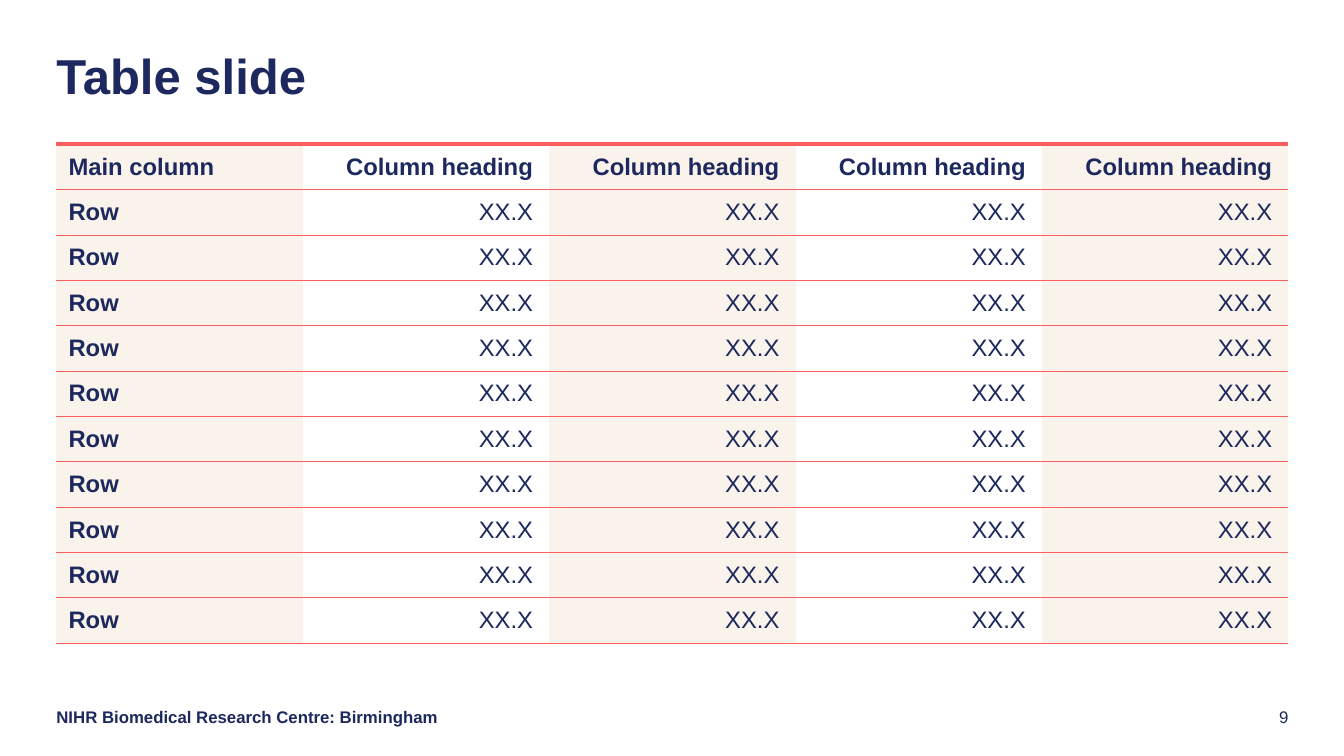
from lxml import etree
from pptx import Presentation
from pptx import util as u
from pptx.dml.color import RGBColor
from pptx.enum import text
from pptx.oxml.ns import qn

COLOURS = {"navy": "1C285E", "coral": "FC5D5D", "cream": "FAF3EB", "white": "FFFFFF"}
FONT = "Arial"
WIDTH, HEIGHT = 13.33, 7.5
MARGIN = 0.56
CONTENT_WIDTH = 12.22
NO_STYLE = "{2D5ABB26-0587-4C30-8999-92F81FD0307C}"

HEADINGS = ["Main column"] + ["Column heading"] * 4
BODY_ROWS = [["Row"] + ["XX.X"] * 4] * 10


def colour(name):
    return RGBColor.from_string(COLOURS[name])


def write(frame, words, size, bold=False, align=text.PP_ALIGN.LEFT,
          anchor=text.MSO_ANCHOR.TOP, spacing=1.0):
    """Put one formatted paragraph into a text frame."""
    frame.text = words
    frame.word_wrap = True
    frame.vertical_anchor = anchor
    paragraph = frame.paragraphs[0]
    paragraph.alignment = align
    paragraph.line_spacing = spacing
    font = paragraph.runs[0].font
    font.name, font.size, font.bold = FONT, u.Pt(size), bold
    font.color.rgb = colour("navy")


def clear_margins(frame):
    frame.auto_size = text.MSO_AUTO_SIZE.NONE
    frame.margin_left = frame.margin_right = frame.margin_top = frame.margin_bottom = 0


def add_title(slide, box, words):
    title = slide.shapes.title
    title.left, title.top, title.width, title.height = map(u.Inches, box)
    clear_margins(title.text_frame)
    write(title.text_frame, words, 35, bold=True, spacing=0.9)


def add_label(slide, box, words, **format):
    frame = slide.shapes.add_textbox(*map(u.Inches, box)).text_frame
    clear_margins(frame)
    write(frame, words, 12, **format)


def add_border(cell, side, points):
    properties = cell._tc.get_or_add_tcPr()
    line = etree.SubElement(properties, qn(f"a:{side}"), w=str(u.Pt(points)))
    fill = etree.SubElement(line, qn("a:solidFill"))
    etree.SubElement(fill, qn("a:srgbClr"), val=COLOURS["coral"])


def add_data_table(slide, box, rows):
    columns = len(rows[0])
    table = slide.shapes.add_table(len(rows), columns, *map(u.Inches, box)).table
    table.first_row = table.horz_banding = False
    table._tbl.tblPr.find(qn("a:tableStyleId")).text = NO_STYLE
    for column in table.columns:
        column.width = u.Inches(box[2] / columns)
    for r, values in enumerate(rows):
        table.rows[r].height = u.Inches(box[3] / len(rows))
        for c, value in enumerate(values):
            cell = table.cell(r, c)
            # Heavy rule above the header, thin rules elsewhere
            add_border(cell, "lnT", 3 if r == 0 else 0.5)
            add_border(cell, "lnB", 0.5)
            # Alternate column shading
            cell.fill.solid()
            cell.fill.fore_color.rgb = colour("white" if c % 2 else "cream")
            cell.margin_left, cell.margin_right = u.Inches(0.12), u.Inches(0.16)
            cell.margin_top = cell.margin_bottom = u.Inches(0.08)
            write(cell.text_frame, value, 17, bold=r == 0 or c == 0,
                  align=text.PP_ALIGN.RIGHT if c else text.PP_ALIGN.LEFT)
            cell.vertical_anchor = text.MSO_ANCHOR.MIDDLE


def add_footer(slide, box, organisation, number):
    left, top, width, height = box
    number_width = 0.08 * width
    add_label(slide, (left, top, 0.35 * width, height), organisation, bold=True)
    add_label(slide, (left + width - number_width, top, number_width, height), number,
              align=text.PP_ALIGN.RIGHT)


def main():
    presentation = Presentation()
    presentation.slide_width, presentation.slide_height = u.Inches(WIDTH), u.Inches(HEIGHT)
    slide = presentation.slides.add_slide(presentation.slide_layouts[5])
    add_title(slide, (MARGIN, 0.52, 11.83, 0.67), "Table slide")
    add_data_table(slide, (MARGIN, 1.43, CONTENT_WIDTH, 4.95), [HEADINGS] + BODY_ROWS)
    add_footer(slide, (MARGIN, 7.01, CONTENT_WIDTH, 0.2),
               "NIHR Biomedical Research Centre: Birmingham", "9")
    presentation.save("out.pptx")


if __name__ == "__main__":
    main()
